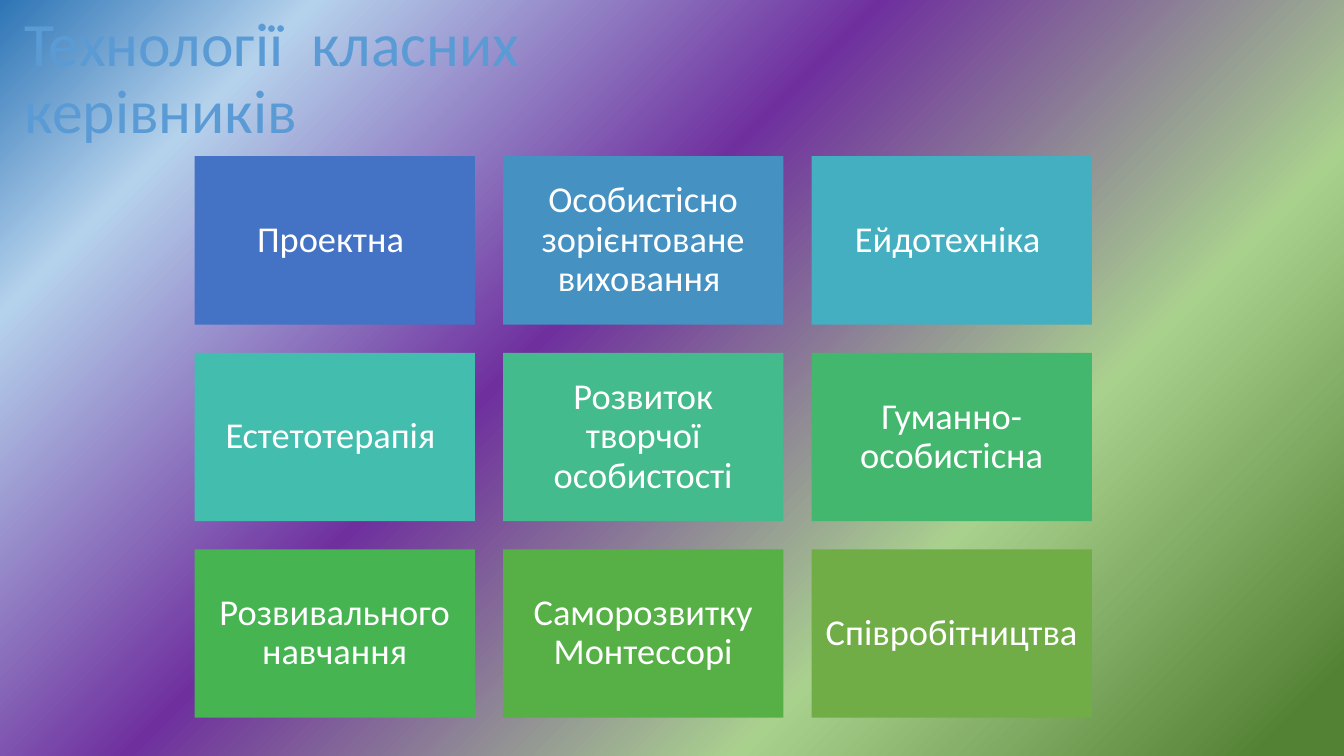
from pptx import Presentation
from pptx.dml.color import RGBColor
from pptx.enum.shapes import MSO_SHAPE
from pptx.enum.text import MSO_ANCHOR, MSO_AUTO_SIZE, PP_ALIGN
from pptx.oxml import parse_xml
from pptx.oxml.ns import nsdecls, qn
from pptx.util import Inches, Pt

RECT = MSO_SHAPE.RECTANGLE
MIDDLE = MSO_ANCHOR.MIDDLE
NO_FIT = MSO_AUTO_SIZE.NONE
LEFT, CENTER = PP_ALIGN.LEFT, PP_ALIGN.CENTER

BLUE = RGBColor(0x5B, 0x9B, 0xD5)
WHITE = RGBColor(0xFF, 0xFF, 0xFF)
FONT = "Calibri"

TITLE = "Технології  класних керівників"
CARDS = [
    ("Проектна ", RGBColor(0x44, 0x72, 0xC4)),
    ("Особистісно зорієнтоване виховання ", RGBColor(0x44, 0x91, 0xC2)),
    ("Ейдотехніка ", RGBColor(0x43, 0xAF, 0xC0)),
    ("Естетотерапія ", RGBColor(0x43, 0xBD, 0xAE)),
    ("Розвиток творчої особистості", RGBColor(0x43, 0xBB, 0x8D)),
    ("Гуманно-особистісна", RGBColor(0x44, 0xB7, 0x6E)),
    ("Розвивального навчання", RGBColor(0x45, 0xB4, 0x51)),
    ("Саморозвитку Монтессорі", RGBColor(0x56, 0xB0, 0x46)),
    ("Співробітництва", RGBColor(0x70, 0xAD, 0x47)),
]
STOPS = [
    (4, RGBColor(0x54, 0x82, 0x35)),
    (29, RGBColor(0xA9, 0xD1, 0x8E)),
    (58, RGBColor(0x6F, 0x30, 0x9E)),
    (85, RGBColor(0xB5, 0xD2, 0xEC)),
    (100, RGBColor(0x2E, 0x75, 0xB6)),
]
COLS = 3
GRID_X, GRID_Y = 1.93, 1.55
CARD_W, CARD_H = 2.78, 1.67
GAP = 0.28
INSET = Inches(0.11)


def paint_back(slide):
    slide.background.fill.solid()
    props = slide.element.find(".//" + qn("p:bgPr"))
    stops = "".join(
        f'<a:gs pos="{pos * 1000}"><a:srgbClr val="{color}"/></a:gs>'
        for pos, color in STOPS
    )
    grad = parse_xml(
        f'<a:gradFill {nsdecls("a")} rotWithShape="1"><a:gsLst>{stops}</a:gsLst>'
        '<a:path path="circle"><a:fillToRect l="100000" t="100000"/></a:path>'
        '<a:tileRect r="-100000" b="-100000"/></a:gradFill>'
    )
    props.replace(props.find(qn("a:solidFill")), grad)


def set_text(shape, text, size, color, align):
    frame = shape.text_frame
    frame.text = text
    frame.word_wrap = True
    frame.auto_size = NO_FIT
    frame.vertical_anchor = MIDDLE
    para = frame.paragraphs[0]
    para.alignment = align
    para.line_spacing = 0.9
    font = para.runs[0].font
    font.name = FONT
    font.size = Pt(size)
    font.color.rgb = color


def add_card(slide, index, text, color):
    row, col = divmod(index, COLS)
    left = GRID_X + col * (CARD_W + GAP)
    top = GRID_Y + row * (CARD_H + GAP)
    card = slide.shapes.add_shape(
        RECT, Inches(left), Inches(top), Inches(CARD_W), Inches(CARD_H)
    )
    card.shadow.inherit = False
    card.fill.solid()
    card.fill.fore_color.rgb = color
    card.line.fill.background()
    set_text(card, text, 26, WHITE, CENTER)
    frame = card.text_frame
    frame.margin_left = frame.margin_right = INSET
    frame.margin_top = frame.margin_bottom = INSET


def main():
    deck = Presentation()
    deck.slide_width = Inches(13.33)
    deck.slide_height = Inches(7.5)
    slide = deck.slides.add_slide(deck.slide_layouts[5])
    paint_back(slide)

    title = slide.shapes.title
    title.left, title.top = Inches(0.14), Inches(0.07)
    title.width, title.height = Inches(7.92), Inches(1.45)
    set_text(title, TITLE, 44, BLUE, LEFT)

    for index, (text, color) in enumerate(CARDS):
        add_card(slide, index, text, color)
    deck.save("out.pptx")


if __name__ == "__main__":
    main()
